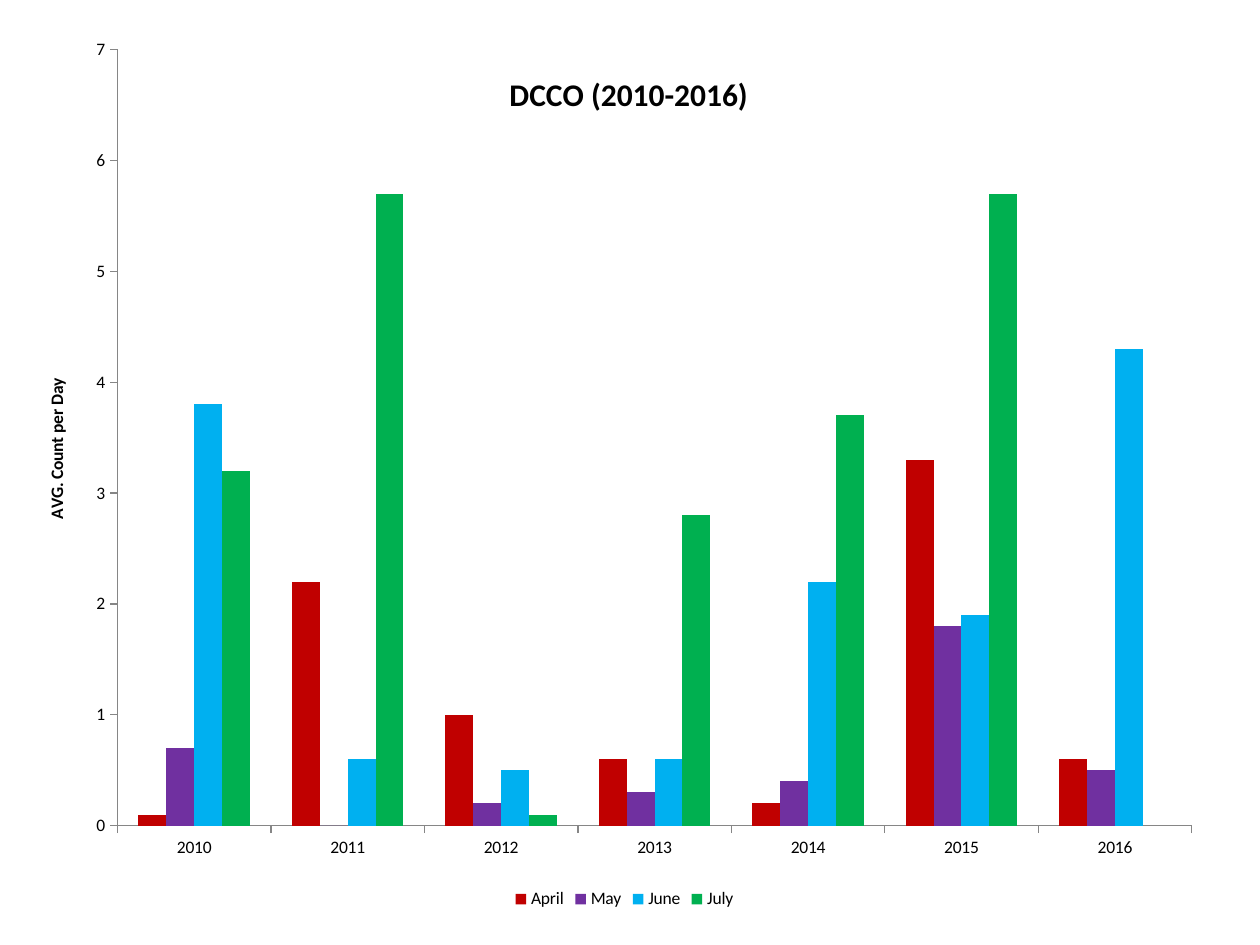
import pptx
import pptx.chart.data
import pptx.dml.color
import pptx.enum.chart
import pptx.oxml
import pptx.oxml.ns
import pptx.util

PX = 914400 / 126
FONT = "Calibri"
BLACK = "000000"
AXIS_GREY = "868686"
YEARS = [str(year) for year in range(2010, 2017)]
MONTHS = [
    ("April", "C00000", [0.1, 2.2, 1.0, 0.6, 0.2, 3.3, 0.6]),
    ("May", "7030A0", [0.7, 0.0, 0.2, 0.3, 0.4, 1.8, 0.5]),
    ("June", "00B0F0", [3.8, 0.6, 0.5, 0.6, 2.2, 1.9, 4.3]),
    ("July", "00B050", [3.2, 5.7, 0.1, 2.8, 3.7, 5.7, None]),
]


def px(length):
    return pptx.util.Emu(round(length * PX))


def rgb(hex_color):
    return pptx.dml.color.RGBColor.from_string(hex_color)


def style_font(font, size, bold=False):
    font.name = FONT
    font.size = pptx.util.Pt(size)
    font.bold = bold
    font.color.rgb = rgb(BLACK)


def set_title(owner, text, size):
    """Give a chart or an axis a bold title."""
    owner.has_title = True
    title = owner.chart_title if hasattr(owner, "chart_title") else owner.axis_title
    title.text_frame.text = text
    style_font(title.text_frame.paragraphs[0].runs[0].font, size, bold=True)
    return title


def set_layout(element, inner=False, **fractions):
    """Place a chart part by fractions of the chart's width and height."""
    for old in element.findall(pptx.oxml.ns.qn("c:layout")):
        element.remove(old)
    target = '<c:layoutTarget val="inner"/>' if inner else ""
    modes = "".join(f'<c:{key}Mode val="edge"/>' for key in ("x", "y"))
    values = "".join(f'<c:{key} val="{value}"/>' for key, value in fractions.items())
    layout = pptx.oxml.parse_xml(
        f'<c:layout {pptx.oxml.ns.nsdecls("c")}><c:manualLayout>'
        f"{target}{modes}{values}</c:manualLayout></c:layout>"
    )
    text = element.find(pptx.oxml.ns.qn("c:tx"))
    element.insert(0 if text is None else 1, layout)


def style_axis(axis):
    axis.has_major_gridlines = False
    axis.major_tick_mark = pptx.enum.chart.XL_TICK_MARK.OUTSIDE
    axis.minor_tick_mark = pptx.enum.chart.XL_TICK_MARK.NONE
    axis.format.line.color.rgb = rgb(AXIS_GREY)
    axis.format.line.width = pptx.util.Pt(0.75)
    style_font(axis.tick_labels.font, 10)


def add_count_chart(slide, left, top, width, height):
    counts = pptx.chart.data.CategoryChartData(number_format="0.0")
    counts.categories = YEARS
    for month, _, values in MONTHS:
        counts.add_series(month, values)
    chart = slide.shapes.add_chart(
        pptx.enum.chart.XL_CHART_TYPE.COLUMN_CLUSTERED,
        px(left), px(top), px(width), px(height), counts,
    ).chart
    style_font(chart.font, 10)

    heading = set_title(chart, "DCCO (2010-2016)", 18)
    heading.include_in_layout = True
    set_layout(heading._element, x=0.4, y=0.04)
    set_layout(chart._chartSpace.chart.plotArea, inner=True,
               x=0.08, y=0.02, w=0.89, h=0.88)

    style_axis(chart.category_axis)
    count_axis = chart.value_axis
    style_axis(count_axis)
    set_title(count_axis, "AVG. Count per Day", 10)
    count_axis.minimum_scale = 0
    count_axis.maximum_scale = 7
    count_axis.major_unit = 1
    count_axis.tick_labels.number_format = "0"
    count_axis.tick_labels.number_format_is_linked = False

    chart.has_legend = True
    chart.legend.position = pptx.enum.chart.XL_LEGEND_POSITION.BOTTOM
    chart.legend.include_in_layout = False
    style_font(chart.legend.font, 10)

    columns = chart.plots[0]
    columns.gap_width = 150
    columns.overlap = 0
    columns.vary_by_categories = False
    for series, (_, color, _) in zip(columns.series, MONTHS):
        series.format.fill.solid()
        series.format.fill.fore_color.rgb = rgb(color)
        series.invert_if_negative = False


def main():
    deck = pptx.Presentation()
    deck.slide_width, deck.slide_height = px(1260), px(945)
    slide = deck.slides.add_slide(deck.slide_layouts[6])
    add_count_chart(slide, 21, 32, 1207, 882)
    deck.save("out.pptx")


if __name__ == "__main__":
    main()
